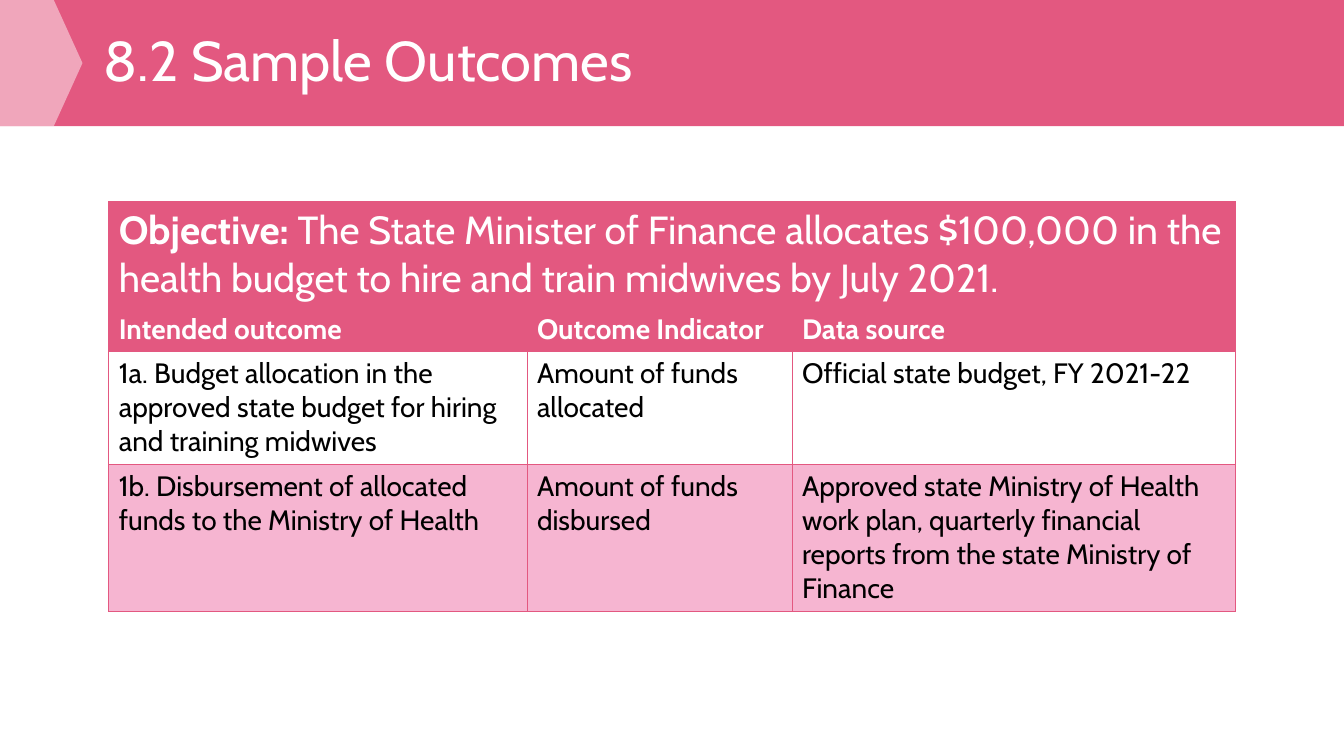
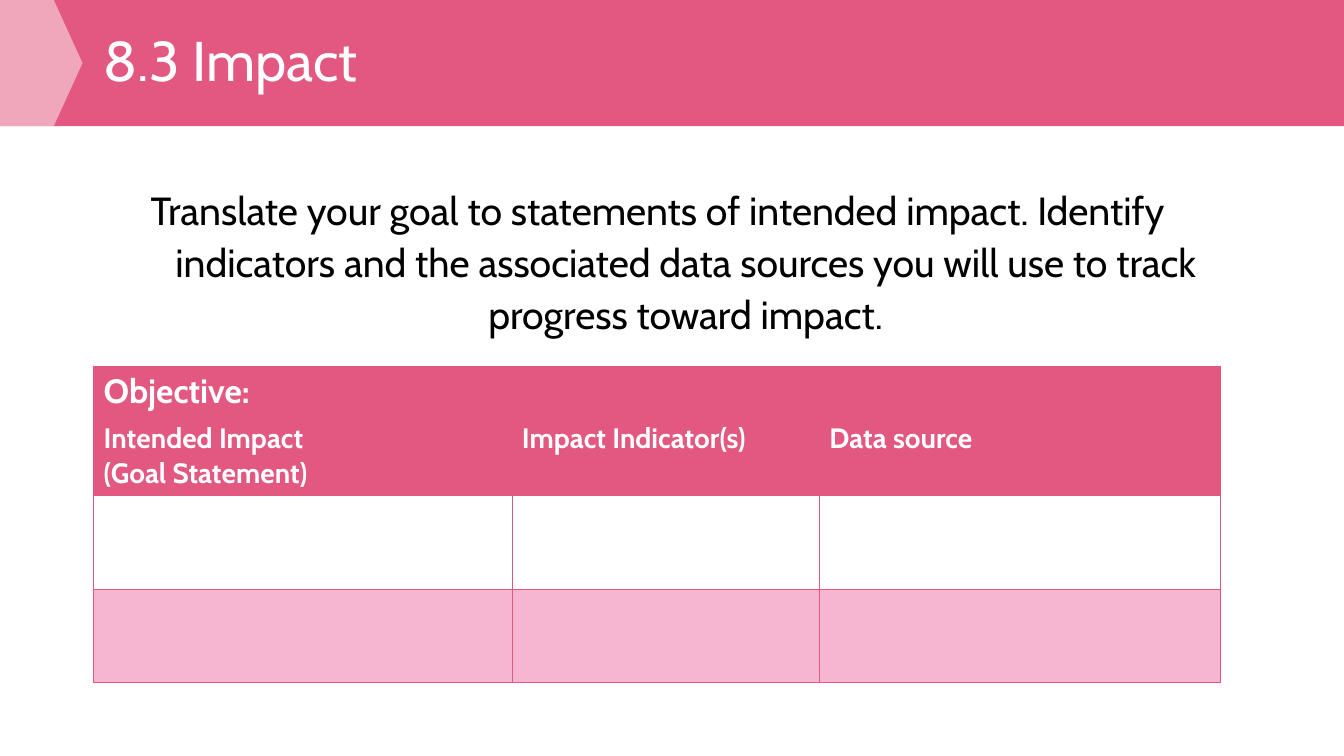
from dataclasses import dataclass

from lxml import etree
from pptx import Presentation
from pptx.dml.color import RGBColor
from pptx.enum import shapes, text
from pptx.oxml import ns
from pptx.util import Cm, Pt


@dataclass(frozen=True)
class Theme:
    font: str = "Cabin"
    accent: RGBColor = RGBColor(0xE3, 0x58, 0x80)
    tint: RGBColor = RGBColor(0xF6, 0xB5, 0xD1)
    light: RGBColor = RGBColor(0xFF, 0xFF, 0xFF)
    dark: RGBColor = RGBColor(0, 0, 0)
    title: int = 40
    lead: int = 28
    objective: int = 24
    cell: int = 20
    border: float = 0.5


TITLE_AND_BODY, TITLE_ONLY = 1, 5


class Slides:
    def __init__(self, theme):
        self.theme = theme
        self.deck = Presentation()
        self.deck.slide_width, self.deck.slide_height = Cm(33.87), Cm(19.05)
        self.page = None

    def add_page(self, title, layout):
        self.page = self.deck.slides.add_slide(self.deck.slide_layouts[layout])
        if len(self.deck.slides) == 1:
            self.add_master_band()
        para = self.fill_placeholder(self.page.shapes.title, title,
                                     (2.36, 0.51, 26.87, 2.18), text.MSO_ANCHOR.MIDDLE)
        para.alignment = text.PP_ALIGN.LEFT
        para.line_spacing = 0.9
        self.style(para, self.theme.title, self.theme.light)

    def add_master_band(self):
        """Build the header band and move it to the master, behind all text."""
        kinds = shapes.MSO_SHAPE
        band = self.add_shape(kinds.RECTANGLE, self.deck.slide_width, self.theme.accent)
        arrow = self.add_shape(kinds.PENTAGON, Cm(2.08), self.theme.light)
        arrow.adjustments[0] = 0.348
        color = arrow.fill._xPr.find(".//" + ns.qn("a:srgbClr"))
        etree.SubElement(color, ns.qn("a:alpha"), val="47000")
        tree = self.deck.slide_master.shapes.element
        for offset, shape in enumerate((band, arrow)):
            shape.element.nvSpPr.cNvPr.set("id", str(100 + offset))
            tree.insert(2 + offset, shape.element)

    def add_shape(self, kind, width, color):
        shape = self.page.shapes.add_shape(kind, 0, 0, width, Cm(3.18))
        shape.shadow.inherit = False
        shape.fill.solid()
        shape.fill.fore_color.rgb = color
        shape.line.fill.background()
        return shape

    def fill_placeholder(self, box, words, place, anchor):
        box.left, box.top, box.width, box.height = map(Cm, place)
        frame = box.text_frame
        frame.text = words
        frame.word_wrap = True
        frame.auto_size = text.MSO_AUTO_SIZE.NONE
        frame.vertical_anchor = anchor
        return frame.paragraphs[0]

    def add_body(self, words):
        para = self.fill_placeholder(self.page.placeholders[1], words,
                                     (1.96, 4.45, 29.21, 13.13), text.MSO_ANCHOR.TOP)
        para.alignment = text.PP_ALIGN.CENTER
        para.line_spacing = 1.1
        para.space_before = Pt(0)
        properties = para._p.get_or_add_pPr()
        properties.set("marL", str(Cm(1.42)))
        properties.set("indent", str(-Cm(1.42)))
        etree.SubElement(properties, ns.qn("a:buNone"))
        self.style(para, self.theme.lead, self.theme.dark)

    def add_table(self, place, widths, heights, objective, size, rows):
        theme = self.theme
        left, top = map(Cm, place)
        table = self.page.shapes.add_table(
            len(heights), len(widths), left, top,
            Cm(sum(widths)), Cm(sum(heights))).table
        table.first_row = table.horz_banding = False
        for column, width in zip(table.columns, widths):
            column.width = Cm(width)
        for row, height in zip(table.rows, heights):
            row.height = Cm(height)

        # Cell colours and borders
        fills = (theme.accent, theme.accent, theme.light, theme.tint)
        for row, color in zip(table.rows, fills):
            for cell in row.cells:
                self.add_borders(cell)
                cell.fill.solid()
                cell.fill.fore_color.rgb = color

        # Objective across the full width
        heading = table.cell(0, 0)
        heading.merge(table.cell(0, len(widths) - 1))
        para = heading.text_frame.paragraphs[0]
        for index, words in enumerate(objective):
            span = para.add_run()
            span.text = words
            span.font.bold = index == 0
        self.style(para, size, theme.light)

        # Column headings and entries
        for r, entries in enumerate(rows, start=1):
            for c, words in enumerate(entries):
                frame = table.cell(r, c).text_frame
                frame.text = words
                for para in frame.paragraphs:
                    self.style(para, theme.cell,
                               theme.light if r == 1 else theme.dark, r == 1)

    def add_borders(self, cell):
        properties = cell._tc.get_or_add_tcPr()
        for side in "LRTB":
            line = etree.SubElement(properties, ns.qn("a:ln" + side),
                                    w=str(Pt(self.theme.border)))
            fill = etree.SubElement(line, ns.qn("a:solidFill"))
            etree.SubElement(fill, ns.qn("a:srgbClr"), val=str(self.theme.accent))

    def style(self, para, size, color, bold=None):
        font = para.font
        font.name, font.size, font.bold = self.theme.font, Pt(size), bold
        font.color.rgb = color


def main():
    theme = Theme()
    slides = Slides(theme)

    # Sample outcomes
    slides.add_page("8.2 Sample Outcomes", TITLE_ONLY)
    slides.add_table(
        (2.74, 5.08), (10.54, 6.68, 11.18), (2.66, 1.12, 2.82, 3.71),
        ("Objective: ", "The State Minister of Finance allocates $100,000 in the "
                        "health budget to hire and train midwives by July 2021."),
        theme.lead,
        (("Intended outcome", "Outcome Indicator", "Data source"),
         ("1a. Budget allocation in the approved state budget for hiring "
          "and training midwives",
          "Amount of funds allocated", "Official state budget, FY 2021-22"),
         ("1b. Disbursement of allocated funds to the Ministry of Health",
          "Amount of funds disbursed",
          "Approved state Ministry of Health work plan, quarterly financial "
          "reports from the state Ministry of Finance")))

    # Impact worksheet
    slides.add_page("8.3 Impact", TITLE_AND_BODY)
    slides.add_table(
        (2.36, 9.22), (10.54, 7.75, 10.11), (1.28, 1.98, 2.36, 2.36),
        ("Objective:",), theme.objective,
        (("Intended Impact\n(Goal Statement)", "Impact Indicator(s)", "Data source"),))
    slides.add_body("Translate your goal to statements of intended impact. Identify "
                    "indicators and the associated data sources you will use to track "
                    "progress toward impact.")

    slides.deck.save("out.pptx")


if __name__ == "__main__":
    main()
